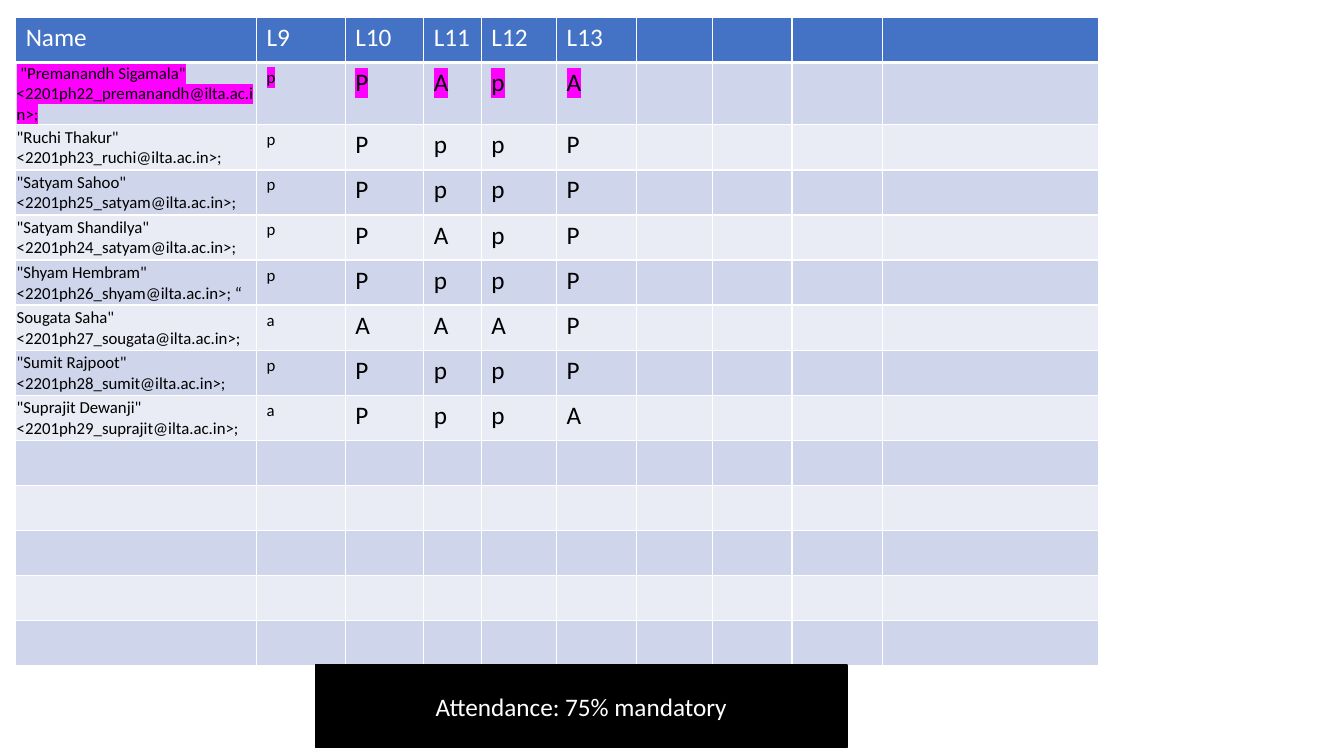
"""Build an attendance slide with a register table and a rule banner."""
import pptx
import pptx.dml.color
import pptx.enum.shapes
import pptx.enum.text
import pptx.oxml
import pptx.oxml.ns
import pptx.util

Pt = pptx.util.Pt
RGBColor = pptx.dml.color.RGBColor
qn = pptx.oxml.ns.qn

WHITE = RGBColor(0xFF, 0xFF, 0xFF)
BLACK = RGBColor(0x00, 0x00, 0x00)
HEADER_BLUE = RGBColor(0x44, 0x72, 0xC4)
BAND_COLORS = [RGBColor(0xCF, 0xD5, 0xEA), RGBColor(0xE9, 0xEB, 0xF5)]
MAGENTA = RGBColor(0xFF, 0x00, 0xFF)

HEADERS = ["Name", "L9", "L10", "L11", "L12", "L13"]
STUDENTS = [
    (' "Premanandh Sigamala" <2201ph22_premanandh@ilta.ac.in>;', "pPApA"),
    ('"Ruchi Thakur" <2201ph23_ruchi@ilta.ac.in>;', "pPppP"),
    ('"Satyam Sahoo" <2201ph25_satyam@ilta.ac.in>;', "pPppP"),
    ('"Satyam Shandilya" <2201ph24_satyam@ilta.ac.in>;', "pPApP"),
    ('"Shyam Hembram" <2201ph26_shyam@ilta.ac.in>; “', "pPppP"),
    ('Sougata Saha" <2201ph27_sougata@ilta.ac.in>;', "aAAAP"),
    ('"Sumit Rajpoot" <2201ph28_sumit@ilta.ac.in>;', "pPppP"),
    ('"Suprajit Dewanji" <2201ph29_suprajit@ilta.ac.in>;', "aPppA"),
]
COLUMN_WIDTHS = [172, 63.5, 56, 41.2, 53.8, 57, 54.2, 56.9, 64.7, 154.2]
ROW_COUNT = 14
ROW_HEIGHT = 32.2
SMALL_COLUMNS = 2


class SlideBuilder:
    """Hold the text style and the current slide."""

    def __init__(self, slide, font="Calibri", size=18, small_size=12):
        self.slide = slide
        self.font = font
        self.size = size
        self.small_size = small_size

    def style_text(self, paragraph, color, size, highlight=None):
        for run in paragraph.runs:
            run.font.name = self.font
            run.font.size = Pt(size)
            run.font.bold = False
            run.font.color.rgb = color
            if highlight is not None:
                fill = run.font._element.find(qn("a:solidFill"))
                fill.addnext(pptx.oxml.parse_xml(
                    f'<a:highlight {pptx.oxml.ns.nsdecls("a")}>'
                    f'<a:srgbClr val="{highlight}"/></a:highlight>'))

    def border_cell(self, cell, bottom_width):
        properties = cell._tc.get_or_add_tcPr()
        widths = {"lnL": 1, "lnR": 1, "lnT": 1, "lnB": bottom_width}
        for position, (side, width) in enumerate(widths.items()):
            properties.insert(position, pptx.oxml.parse_xml(
                f'<a:{side} {pptx.oxml.ns.nsdecls("a")} w="{Pt(width)}">'
                f'<a:solidFill><a:srgbClr val="{WHITE}"/></a:solidFill></a:{side}>'))

    def add_cell(self, cell, text, row, column):
        is_header = row == 0
        cell.fill.solid()
        cell.fill.fore_color.rgb = HEADER_BLUE if is_header else BAND_COLORS[(row - 1) % 2]
        self.border_cell(cell, 3 if is_header else 1)
        if not text:
            return
        cell.text_frame.text = text
        is_small = not is_header and column < SMALL_COLUMNS
        self.style_text(cell.text_frame.paragraphs[0],
                        WHITE if is_header else BLACK,
                        self.small_size if is_small else self.size,
                        MAGENTA if row == 1 else None)
        if column == 0 and not is_header:
            cell.vertical_anchor = pptx.enum.text.MSO_ANCHOR.MIDDLE
            cell.margin_left = cell.margin_right = cell.margin_top = Pt(0.75)
            cell.margin_bottom = 0

    def add_register(self, left, top):
        frame = self.slide.shapes.add_table(
            ROW_COUNT, len(COLUMN_WIDTHS), Pt(left), Pt(top),
            Pt(sum(COLUMN_WIDTHS)), Pt(ROW_COUNT * ROW_HEIGHT))
        table = frame.table
        table.first_row = table.horz_banding = False
        for column, width in zip(table.columns, COLUMN_WIDTHS):
            column.width = Pt(width)
        lines = [HEADERS] + [[name, *marks] for name, marks in STUDENTS]
        for row in range(ROW_COUNT):
            table.rows[row].height = Pt(ROW_HEIGHT)
            line = lines[row] if row < len(lines) else []
            for column in range(len(COLUMN_WIDTHS)):
                text = line[column] if column < len(line) else ""
                self.add_cell(table.cell(row, column), text, row, column)

    def add_banner(self, text, left, top, width, height):
        shape = self.slide.shapes.add_shape(
            pptx.enum.shapes.MSO_SHAPE.RECTANGLE,
            Pt(left), Pt(top), Pt(width), Pt(height))
        shape.shadow.inherit = False
        shape.fill.solid()
        shape.fill.fore_color.rgb = BLACK
        shape.line.color.rgb = BLACK
        shape.line.width = Pt(1)
        shape.text_frame.text = text
        shape.text_frame.vertical_anchor = pptx.enum.text.MSO_ANCHOR.MIDDLE
        paragraph = shape.text_frame.paragraphs[0]
        paragraph.alignment = pptx.enum.text.PP_ALIGN.CENTER
        self.style_text(paragraph, WHITE, self.size)


def main():
    presentation = pptx.Presentation()
    presentation.slide_width = Pt(960)
    presentation.slide_height = Pt(540)
    slide = presentation.slides.add_slide(presentation.slide_layouts[6])
    builder = SlideBuilder(slide)
    builder.add_register(11.2, 12.4)
    builder.add_banner("Attendance: 75% mandatory", 225.4, 475, 379.6, 59)
    presentation.save("out.pptx")


if __name__ == "__main__":
    main()
